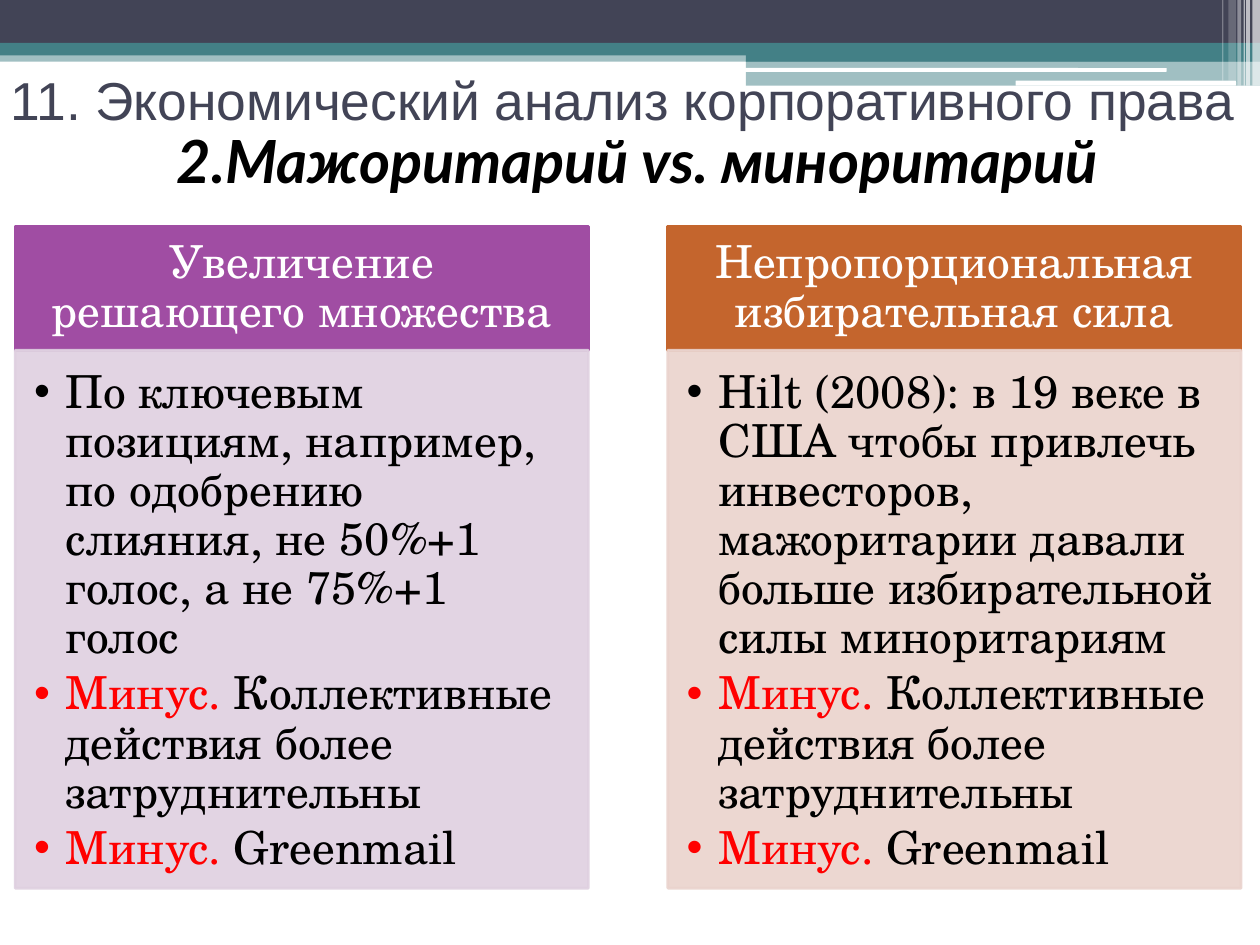
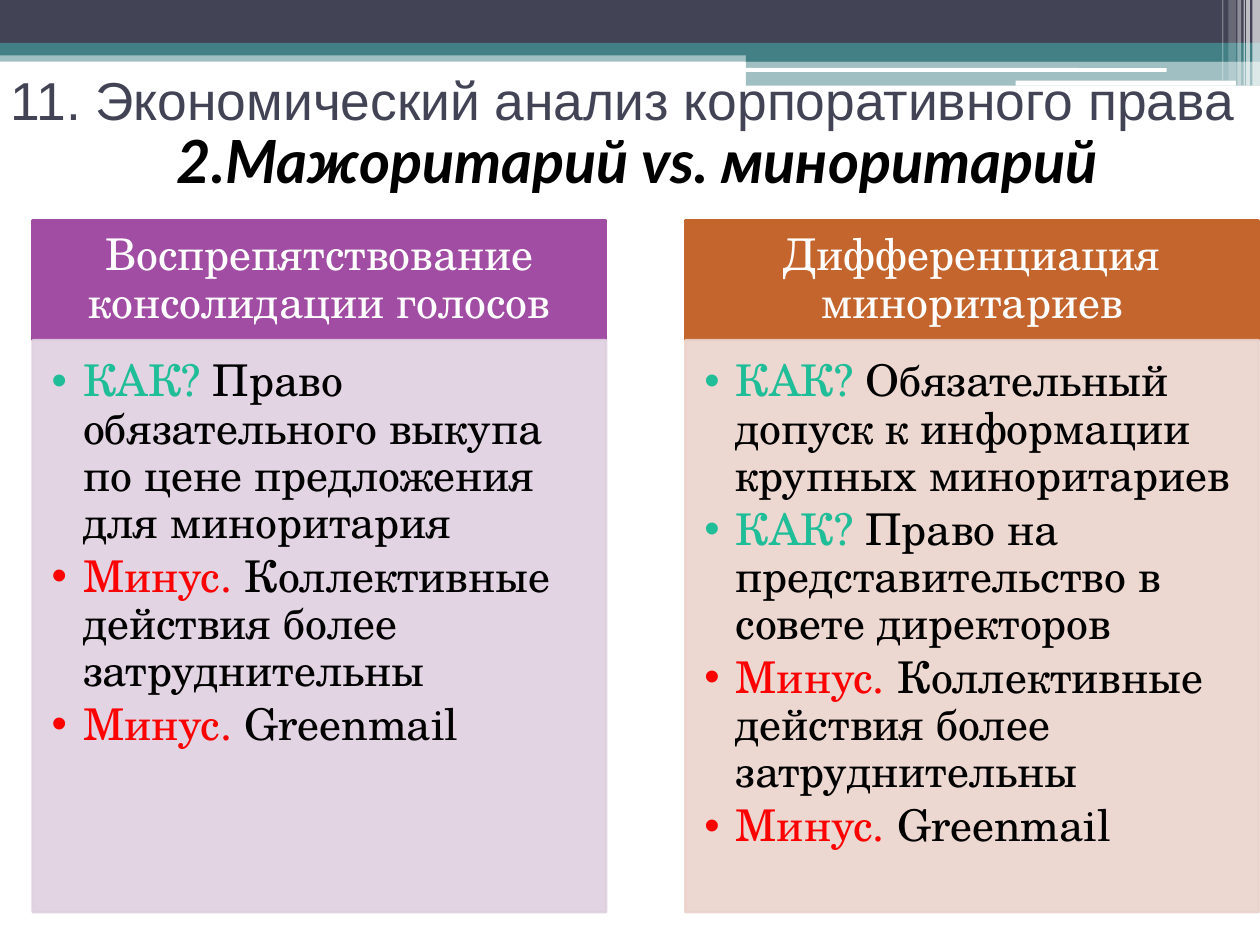
from lxml.etree import SubElement
from pptx import Presentation
from pptx.dml.color import RGBColor
from pptx.enum.shapes import MSO_SHAPE as Preset
from pptx.enum.text import MSO_ANCHOR as Anchor, MSO_AUTO_SIZE as AutoSize, PP_ALIGN as Align
from pptx.oxml.ns import qn
from pptx.util import Inches, Pt

COLORS = {
    "navy": "424456", "teal": "438086", "white": "FFFFFF", "black": "000000",
    "purple": "A04DA3", "lilac": "DFD0E0", "orange": "C4652D", "peach": "EAD3CD",
    "minus": "FF0000", "how": "20BE98",
}
COURSE = "11. Экономический анализ корпоративного права"
TOPIC = "2.Мажоритарий vs. миноритарий"
SERIF = "TeX Gyre Schola"
COLUMN_WIDTH, COLUMN_GAP = 4.55, 0.63
COLUMN_COLORS = [("purple", "lilac"), ("orange", "peach")]

# left, top, width, height, colour, opacity in percent
BANDS = [
    (0, 0.4, 10, 0.09, "teal", 50),
    (0, 0, 10, 0.34, "navy", 100),
    (0, 0.34, 10, 0.1, "teal", 100),
    (5.92, 0.39, 4.08, 0.1, "teal", 100),
    (5.92, 0.48, 4.08, 0.2, "teal", 50),
]
HIGHLIGHTS = [(5.91, 0.54, 3.35, 0.03), (8.06, 0.64, 1.75, 0.04)]
# left, width, height, opacity in percent
STRIPES = [
    (9.94, 0.06, 0.68, 65), (9.89, 0.03, 0.68, 65), (9.87, 0.01, 0.68, 60),
    (9.82, 0.03, 0.68, 40), (9.75, 0.06, 0.64, 20), (9.7, 0.01, 0.64, 30),
]

# Each point: label, label colour, remaining text
COLLECTIVE = ("Минус.", "minus", " Коллективные действия более затруднительны")
GREENMAIL = ("Минус. ", "minus", "Greenmail")
SLIDES = [
    dict(left=0.12, top=1.8, head_height=0.98, body_height=4.27, size=26, columns=[
        ("Увеличение решающего множества", [
            ("", "black", "По ключевым позициям, например, по одобрению слияния, "
                          "не 50%+1 голос, а не 75%+1 голос"),
            COLLECTIVE, GREENMAIL]),
        ("Непропорциональная избирательная сила", [
            ("", "black", "Hilt (2008): в 19 веке в США чтобы привлечь инвесторов, "
                          "мажоритарии давали больше избирательной силы миноритариям"),
            COLLECTIVE, GREENMAIL]),
    ]),
    dict(left=0.26, top=1.75, head_height=0.95, body_height=4.54, size=25, columns=[
        ("Воспрепятствование консолидации голосов", [
            ("КАК?", "how", " Право обязательного выкупа по цене предложения для миноритария"),
            COLLECTIVE, GREENMAIL]),
        ("Дифференциация миноритариев", [
            ("КАК?", "how", " Обязательный допуск к информации крупных миноритариев"),
            ("КАК?", "how", " Право на представительство в совете директоров"),
            COLLECTIVE, GREENMAIL]),
    ]),
]


def rgb(name):
    return RGBColor.from_string(COLORS[name])


def style_font(font, face, size, color):
    font.name, font.size, font.color.rgb = face, Pt(size), rgb(color)


def add_block(slide, box, color, opacity=100, preset=Preset.RECTANGLE, outline=None):
    block = slide.shapes.add_shape(preset, *map(Inches, box))
    block.shadow.inherit = False
    block.fill.solid()
    block.fill.fore_color.rgb = rgb(color)
    if outline:
        block.line.color.rgb = rgb(color)
        block.line.width = Pt(outline)
    else:
        block.line.fill.background()
    if opacity < 100:
        for tint in block.element.iter(qn("a:srgbClr")):
            SubElement(tint, qn("a:alpha"), val=str(opacity * 1000))
    return block


def move_banner_to_layout(slide):
    """Draw the header decoration and hand it to the layout, so all slides share it."""
    parts = [add_block(slide, band[:4], *band[4:]) for band in BANDS]
    parts += [add_block(slide, box, "white", preset=Preset.ROUNDED_RECTANGLE)
              for box in HIGHLIGHTS]
    parts += [add_block(slide, (left, 0, width, height), "white", opacity)
              for left, width, height, opacity in STRIPES]
    layout_tree = slide.slide_layout.shapes.element
    for number, part in enumerate(parts, 100):
        part.element.nvSpPr.cNvPr.set("id", str(number))
        layout_tree.append(part.element)


def set_margins(frame, left, top, right, bottom):
    frame.margin_left, frame.margin_top = Inches(left), Inches(top)
    frame.margin_right, frame.margin_bottom = Inches(right), Inches(bottom)
    frame.word_wrap = True


def add_titles(slide):
    topic = slide.shapes.title
    topic.left, topic.top, topic.width, topic.height = map(Inches, (0.41, 0.68, 9.3, 1.17))
    course = slide.shapes.add_textbox(*map(Inches, (-0.12, 0.13, 10.12, 1.31)))
    for holder, text, face, size, color in [(topic, TOPIC, "Lato", 34, "black"),
                                            (course, COURSE, "Arial", 30.5, "navy")]:
        frame = holder.text_frame
        frame.text = text
        frame.word_wrap, frame.auto_size = True, AutoSize.NONE
        frame.vertical_anchor = Anchor.MIDDLE
        paragraph = frame.paragraphs[0]
        paragraph.alignment = Align.CENTER
        style_font(paragraph.font, face, size, color)
    topic_font = topic.text_frame.paragraphs[0].font
    topic_font.bold = topic_font.italic = True


def add_heading(slide, box, text, color, size):
    frame = add_block(slide, box, color, outline=1.5).text_frame
    set_margins(frame, 0.2, 0.12, 0.2, 0.12)
    frame.vertical_anchor = Anchor.MIDDLE
    frame.text = text
    heading = frame.paragraphs[0]
    heading.alignment, heading.line_spacing = Align.CENTER, 0.9
    style_font(heading.font, SERIF, size, "white")


def add_points(slide, box, points, color, size):
    frame = add_block(slide, box, color, 90, outline=1.5).text_frame
    set_margins(frame, 0.15, 0.15, 0.19, 0.22)
    frame.vertical_anchor = Anchor.TOP
    for index, (label, label_color, text) in enumerate(points):
        point = frame.add_paragraph() if index else frame.paragraphs[0]
        point.alignment, point.level = Align.LEFT, 1
        point.line_spacing, point.space_after = 0.9, Pt(round(0.15 * size, 1))
        add_bullet(point)
        style_font(point.font, SERIF, size, "black")
        if label:
            run = point.add_run()
            run.text = label
            run.font.color.rgb = rgb(label_color)
        point.add_run().text = text


def add_bullet(paragraph):
    properties = paragraph._p.get_or_add_pPr()
    properties.set("marL", str(Inches(0.25)))
    properties.set("indent", str(-Inches(0.25)))
    SubElement(properties, qn("a:buFont"), typeface="Arial")
    SubElement(properties, qn("a:buChar"), char="•")


def add_columns(slide, left, top, head_height, body_height, size, columns):
    for index, (heading, points) in enumerate(columns):
        dark, light = COLUMN_COLORS[index]
        x = left + index * (COLUMN_WIDTH + COLUMN_GAP)
        add_heading(slide, (x, top, COLUMN_WIDTH, head_height), heading, dark, size)
        add_points(slide, (x, top + head_height, COLUMN_WIDTH, body_height),
                   points, light, size)


def main():
    deck = Presentation()
    deck.slide_width, deck.slide_height = Inches(10), Inches(7.5)
    title_only = deck.slide_layouts[5]
    for index, content in enumerate(SLIDES):
        slide = deck.slides.add_slide(title_only)
        if index == 0:
            move_banner_to_layout(slide)
        add_titles(slide)
        add_columns(slide, **content)
    deck.save("out.pptx")


if __name__ == "__main__":
    main()
